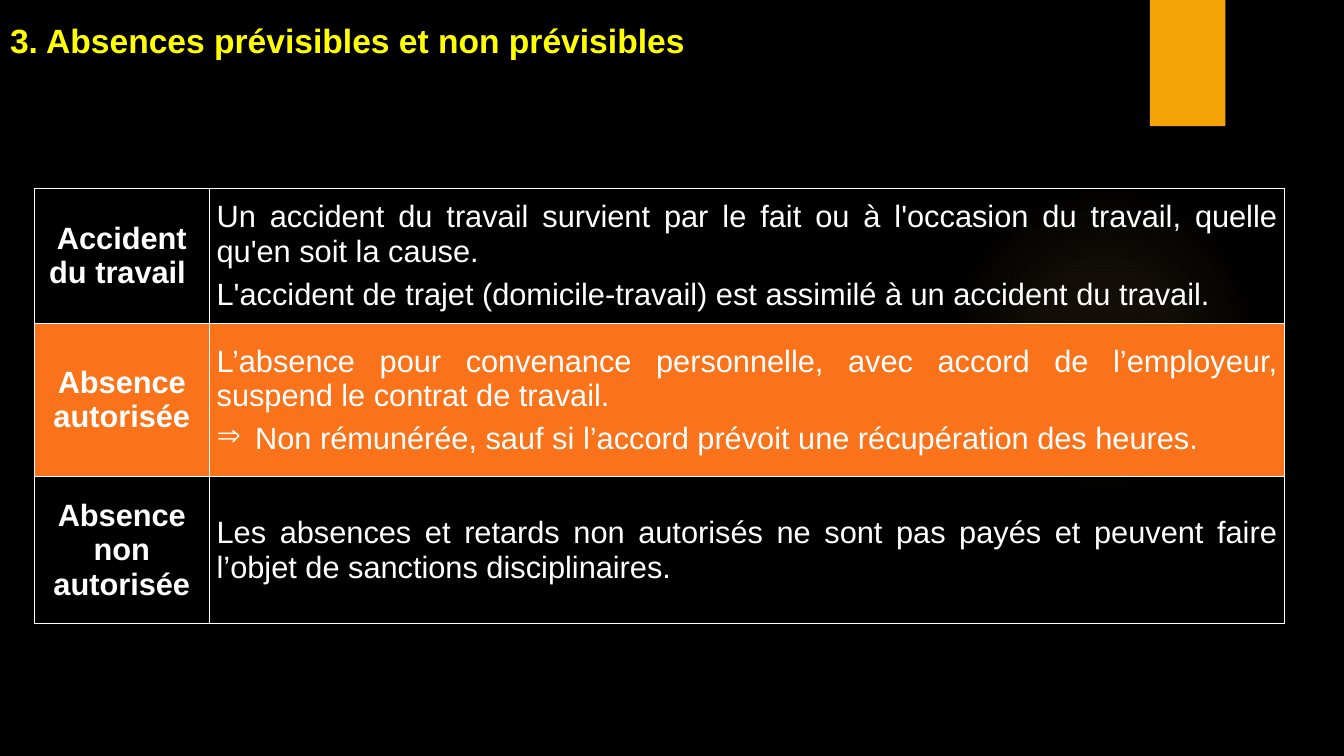
from lxml import etree
from pptx import Presentation
from pptx.dml.color import RGBColor
from pptx.enum.shapes import MSO_SHAPE
from pptx.enum.text import MSO_ANCHOR, PP_ALIGN
from pptx.oxml import parse_xml
from pptx.oxml.ns import qn
from pptx.util import Cm, Pt

RECTANGLE, OVAL = MSO_SHAPE.RECTANGLE, MSO_SHAPE.OVAL
MIDDLE, BOTTOM = MSO_ANCHOR.MIDDLE, MSO_ANCHOR.BOTTOM
LEFT, CENTER, JUSTIFY = PP_ALIGN.LEFT, PP_ALIGN.CENTER, PP_ALIGN.JUSTIFY

DRAWING = "http://schemas.openxmlformats.org/drawingml/2006/main"
BLACK, WHITE, YELLOW = "000000", "FFFFFF", "FFFF00"
AMBER, ORANGE, GLOW = "F5A408", "FA731A", "FAC96A"
ARROW = "⇒"

TITLE_FONT = {"name": "Arial", "size": Pt(24), "bold": True}
LABEL_FONT = {"name": "Arial", "size": Pt(22), "bold": True}
BODY_FONT = {"name": "Arial", "size": Pt(22), "bold": False}
CELL_FORMAT = {
    "vertical_anchor": MIDDLE,
    "margin_left": Cm(0.18),
    "margin_right": Cm(0.18),
    "margin_top": 0,
    "margin_bottom": 0,
}
COLUMN_WIDTHS = [4.42, 27.1]
ROW_HEIGHTS = [3.4, 3.86, 3.71]
ABSENCES = [
    (
        ["Accident du travail "],
        [
            "Un accident du travail survient par le fait ou à l'occasion du travail, "
            "quelle qu'en soit la cause.",
            "L'accident de trajet (domicile-travail) est assimilé à un accident du travail.",
        ],
        None,
    ),
    (
        ["Absence", "autorisée"],
        [
            "L’absence pour convenance personnelle, avec accord de l’employeur, "
            "suspend le contrat de travail.",
            ARROW + "Non rémunérée, sauf si l’accord prévoit une récupération des heures.",
        ],
        ORANGE,
    ),
    (
        ["Absence non autorisée"],
        [
            "Les absences et retards non autorisés ne sont pas payés et peuvent faire "
            "l’objet de sanctions disciplinaires.",
        ],
        None,
    ),
]


def color(value):
    return RGBColor.from_string(value)


def apply_format(target, values):
    for name, value in values.items():
        setattr(target, name, value)


def style_font(paragraph, values, font_color):
    apply_format(paragraph.font, values)
    paragraph.font.color.rgb = color(font_color)


def add_plain_shape(slide, kind, box):
    shape = slide.shapes.add_shape(kind, *map(Cm, box))
    shape.shadow.inherit = False
    shape.line.fill.background()
    return shape


def add_glow(slide, box):
    shape = add_plain_shape(slide, OVAL, box)
    shape.fill.gradient()
    gradient = shape.element.spPr.find(qn("a:gradFill"))
    stops = "".join(
        f'<a:gs pos="{position * 1000}"><a:srgbClr val="{GLOW}">'
        f'<a:alpha val="{opacity * 1000}"/></a:srgbClr></a:gs>'
        for position, opacity in [(0, 7), (36, 6), (69, 0)]
    )
    radial = parse_xml(
        f'<a:gradFill xmlns:a="{DRAWING}"><a:gsLst>{stops}</a:gsLst>'
        '<a:path path="circle"><a:fillToRect l="50000" t="50000" r="50000" b="50000"/>'
        "</a:path></a:gradFill>"
    )
    gradient.getparent().replace(gradient, radial)


def add_tab(slide, box):
    shape = add_plain_shape(slide, RECTANGLE, box)
    shape.fill.solid()
    shape.fill.fore_color.rgb = color(AMBER)


def place_title(slide, box, text):
    title = slide.shapes.title
    apply_format(title, dict(zip(("left", "top", "width", "height"), map(Cm, box))))
    frame = title.text_frame
    apply_format(frame, {"text": text, "word_wrap": True, "vertical_anchor": BOTTOM})
    paragraph = frame.paragraphs[0]
    paragraph.alignment = LEFT
    style_font(paragraph, TITLE_FONT, YELLOW)


def add_bullet(paragraph):
    properties = paragraph._p.get_or_add_pPr()
    indent = Cm(0.97)
    properties.set("marL", str(indent))
    properties.set("indent", str(-indent))
    etree.SubElement(properties, qn("a:buChar")).set("char", ARROW)


def draw_borders(cell):
    properties = cell._tc.get_or_add_tcPr()
    for side in "LRTB":
        properties.append(parse_xml(
            f'<a:ln{side} xmlns:a="{DRAWING}" w="{Pt(1)}"><a:solidFill>'
            f'<a:srgbClr val="{WHITE}"/></a:solidFill></a:ln{side}>'
        ))


def fill_cell(cell, lines, font, alignment, spacing, background):
    apply_format(cell, CELL_FORMAT)
    draw_borders(cell)
    if background:
        cell.fill.solid()
        cell.fill.fore_color.rgb = color(background)
    else:
        cell.fill.background()
    frame = cell.text_frame
    for index, line in enumerate(lines):
        paragraph = frame.add_paragraph() if index else frame.paragraphs[0]
        paragraph.text = line.removeprefix(ARROW)
        apply_format(paragraph, {
            "alignment": alignment,
            "space_before": Pt(spacing if index else 0),
            "space_after": Pt(spacing),
        })
        if line.startswith(ARROW):
            add_bullet(paragraph)
        style_font(paragraph, font, WHITE)


def add_absence_table(slide, left, top):
    box = (left, top, sum(COLUMN_WIDTHS), sum(ROW_HEIGHTS))
    table = slide.shapes.add_table(
        len(ABSENCES), len(COLUMN_WIDTHS), *map(Cm, box)
    ).table
    apply_format(table, {"first_row": False, "horz_banding": False})
    for column, width in zip(table.columns, COLUMN_WIDTHS):
        column.width = Cm(width)
    for row, height, (label, body, background) in zip(table.rows, ROW_HEIGHTS, ABSENCES):
        row.height = Cm(height)
        label_cell, body_cell = row.cells
        fill_cell(label_cell, label, LABEL_FONT, CENTER, 0, background)
        fill_cell(body_cell, body, BODY_FONT, JUSTIFY, 3, background)


def build_absence_slide(presentation):
    slide = presentation.slides.add_slide(presentation.slide_layouts[5])
    slide.background.fill.solid()
    slide.background.fill.fore_color.rgb = color(BLACK)
    add_glow(slide, (23.9, 4.65, 7.82, 7.82))
    add_tab(slide, (28.98, 0, 1.9, 3.18))
    place_title(slide, (0, 0.25, 28.52, 1.4), "3. Absences prévisibles et non prévisibles")
    add_absence_table(slide, 0.86, 4.75)


def main():
    presentation = Presentation()
    presentation.slide_width = Cm(33.87)
    presentation.slide_height = Cm(19.05)
    build_absence_slide(presentation)
    presentation.save("out.pptx")


if __name__ == "__main__":
    main()
